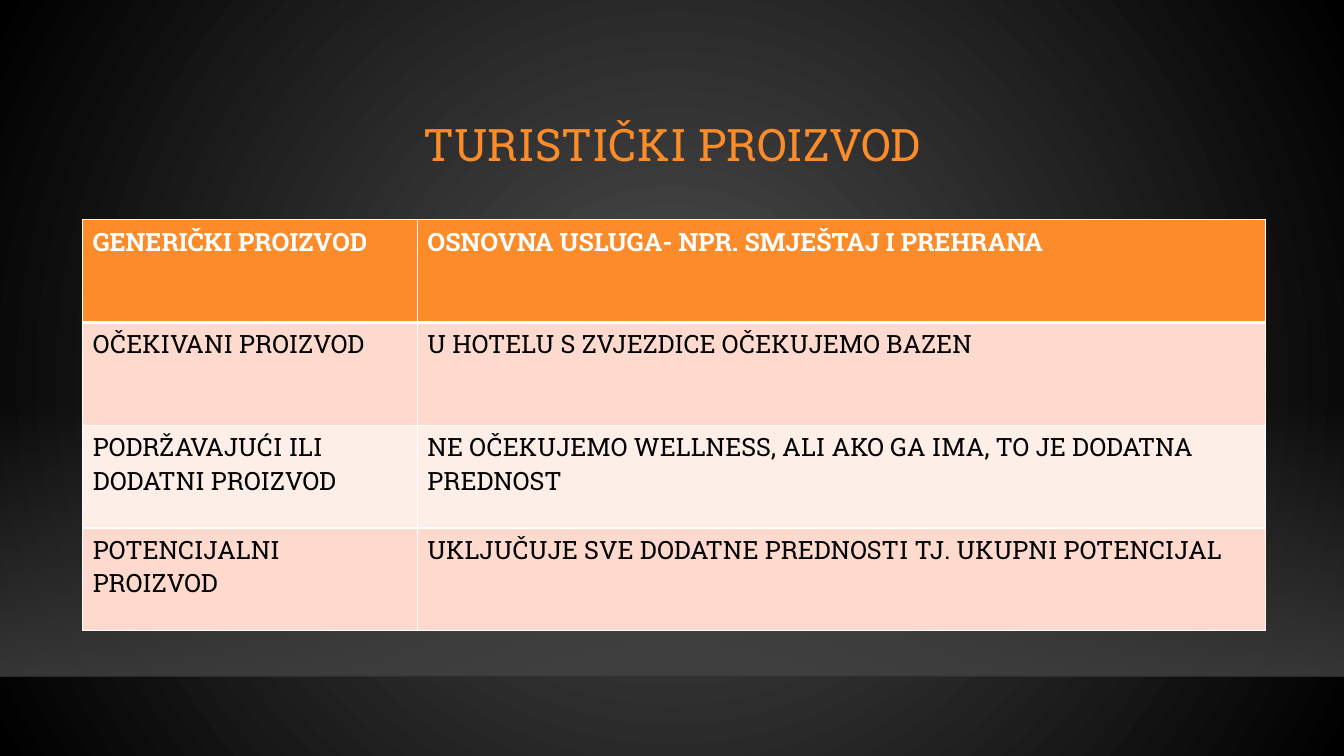
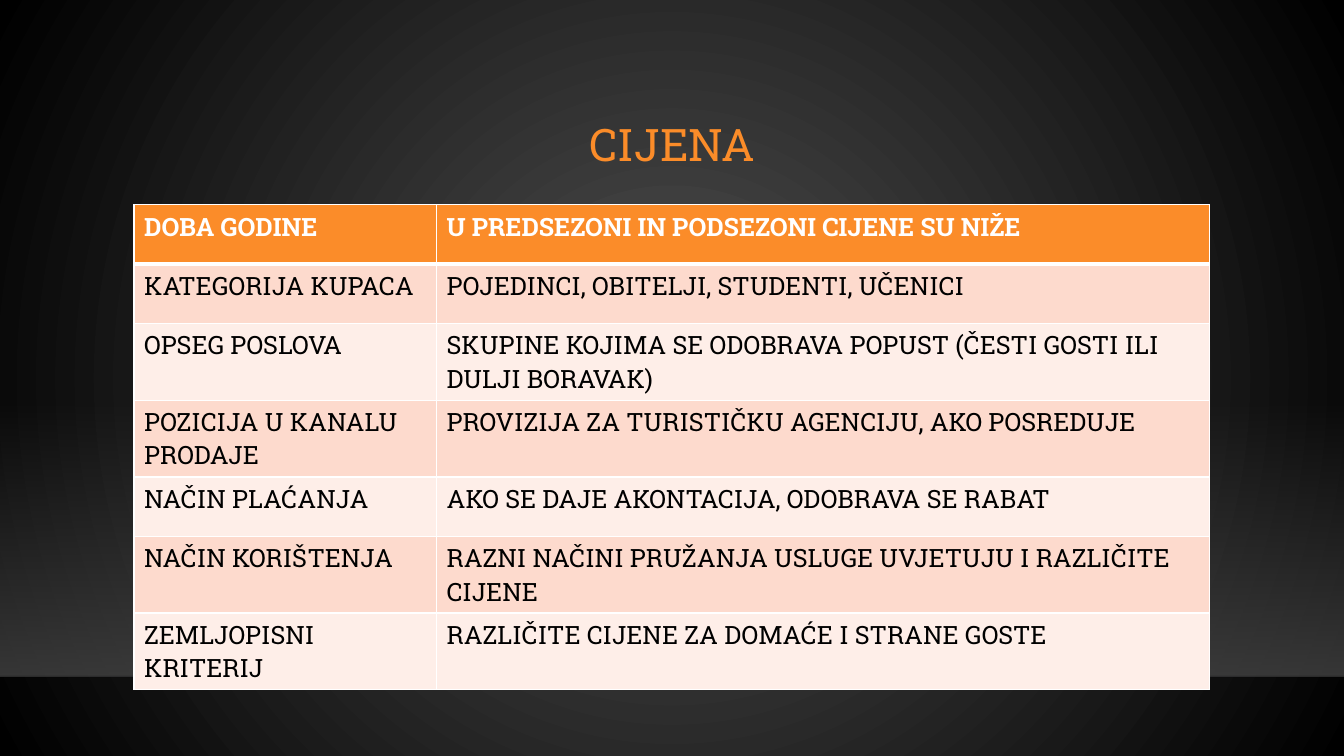
from dataclasses import dataclass

from lxml.etree import SubElement
from pptx import Presentation
from pptx.dml.color import RGBColor
from pptx.enum.shapes import MSO_CONNECTOR as Connector, MSO_SHAPE as Shape
from pptx.enum.text import MSO_ANCHOR as Anchor, MSO_AUTO_SIZE as AutoSize, PP_ALIGN as Align
from pptx.oxml import parse_xml
from pptx.oxml.ns import nsdecls, qn
from pptx.util import Inches, Pt


@dataclass(frozen=True)
class Theme:
    font: str = "Roboto Slab"
    accent: str = "FB8C29"
    white: str = "FFFFFF"
    black: str = "000000"
    glow: str = "505050"
    floor: str = "454545"
    horizon: str = "000001"
    odd_row: str = "FDDACD"
    even_row: str = "FEEEE8"
    title_size: int = 32
    table_size: int = 18
    thin: int = 1
    thick: int = 3


THEME = Theme()
WIDTH, HEIGHT = 13.33, 7.5
FLOOR_TOP, FLOOR_HEIGHT = 3.96, 2.75
TITLE_BOX = (1.59, 0.88, 10.16, 1.15)
TITLE_ONLY = 5

PRODUCT_ROWS = [
    ("GENERIČKI PROIZVOD", "OSNOVNA USLUGA- NPR. SMJEŠTAJ I PREHRANA"),
    ("OČEKIVANI PROIZVOD", "U HOTELU S ZVJEZDICE OČEKUJEMO BAZEN"),
    ("PODRŽAVAJUĆI ILI DODATNI PROIZVOD",
     "NE OČEKUJEMO WELLNESS, ALI AKO GA IMA, TO JE DODATNA PREDNOST"),
    ("POTENCIJALNI PROIZVOD", "UKLJUČUJE SVE DODATNE PREDNOSTI TJ. UKUPNI POTENCIJAL"),
]
PRICE_ROWS = [
    ("DOBA GODINE", "U PREDSEZONI IN PODSEZONI CIJENE SU NIŽE"),
    ("KATEGORIJA KUPACA", "POJEDINCI, OBITELJI, STUDENTI, UČENICI"),
    ("OPSEG POSLOVA", "SKUPINE KOJIMA SE ODOBRAVA POPUST (ČESTI GOSTI ILI DULJI BORAVAK)"),
    ("POZICIJA U KANALU PRODAJE", "PROVIZIJA ZA TURISTIČKU AGENCIJU, AKO POSREDUJE"),
    ("NAČIN PLAĆANJA", "AKO SE DAJE AKONTACIJA, ODOBRAVA SE RABAT"),
    ("NAČIN KORIŠTENJA", "RAZNI NAČINI PRUŽANJA USLUGE UVJETUJU I RAZLIČITE CIJENE"),
    ("ZEMLJOPISNI KRITERIJ", "RAZLIČITE CIJENE ZA DOMAĆE I STRANE GOSTE"),
]


def rgb(color):
    return RGBColor.from_string(color)


def inches(values):
    return [Inches(value) for value in values]


def set_gradient(owner, fill, stops, direction):
    fill.solid()
    stop_list = "".join(
        f'<a:gs pos="{position * 1000}"><a:srgbClr val="{color}">'
        f'<a:alpha val="{alpha * 1000}"/></a:srgbClr></a:gs>'
        for position, color, alpha in stops
    )
    gradient = parse_xml(
        f'<a:gradFill {nsdecls("a")} rotWithShape="1">'
        f"<a:gsLst>{stop_list}</a:gsLst>{direction}</a:gradFill>"
    )
    solid = next(owner.element.iter(qn("a:solidFill")))
    solid.getparent().replace(solid, gradient)


def set_background(master):
    set_gradient(
        master, master.background.fill,
        [(0, THEME.glow, 100), (100, THEME.black, 100)],
        '<a:path path="circle"><a:fillToRect l="50000" t="50000" r="50000" b="50000"/></a:path>',
    )


def add_floor(slide):
    floor = slide.shapes.add_shape(
        Shape.RECTANGLE, *inches((0, FLOOR_TOP, WIDTH, FLOOR_HEIGHT)))
    floor.shadow.inherit = False
    floor.line.fill.background()
    set_gradient(
        floor, floor.fill,
        [(0, THEME.floor, 0), (100, THEME.floor, 80)],
        '<a:lin ang="5400000" scaled="0"/>',
    )
    return floor


def add_horizon(slide):
    level = FLOOR_TOP + FLOOR_HEIGHT
    horizon = slide.shapes.add_connector(
        Connector.STRAIGHT, *inches((0, level, WIDTH, level)))
    horizon.line.width = Pt(THEME.thin)
    horizon.line.color.rgb = rgb(THEME.horizon)
    color = next(horizon.element.iter(qn("a:srgbClr")))
    SubElement(color, qn("a:alpha"), val="20000")
    SubElement(horizon.element.spPr, qn("a:effectLst"))
    return horizon


def move_to_master(master, scenery):
    tree = master.shapes.element
    for order, part in enumerate(scenery):
        next(part.element.iter(qn("p:cNvPr"))).set("id", str(100 + order))
        tree.insert(2 + order, part.element)


def format_text(paragraph, size, color, bold=False):
    for run in paragraph.runs:
        run.font.name = THEME.font
        run.font.size = Pt(size)
        run.font.color.rgb = rgb(color)
        run.font.bold = bold


def set_title(slide, text):
    title = slide.shapes.title
    title.left, title.top, title.width, title.height = inches(TITLE_BOX)
    frame = title.text_frame
    frame.text = text
    frame.auto_size = AutoSize.NONE
    frame.vertical_anchor = Anchor.MIDDLE
    heading = frame.paragraphs[0]
    heading.alignment = Align.CENTER
    heading.line_spacing = 0.9
    format_text(heading, THEME.title_size, THEME.accent)


def set_borders(cell, top, bottom):
    properties = cell._tc.get_or_add_tcPr()
    widths = {"lnL": THEME.thin, "lnR": THEME.thin, "lnT": top, "lnB": bottom}
    for side, width in widths.items():
        border = SubElement(properties, qn(f"a:{side}"), w=str(Pt(width)))
        fill = SubElement(border, qn("a:solidFill"))
        SubElement(fill, qn("a:srgbClr"), val=THEME.white)


def style_cell(cell, row):
    header = row == 0
    set_borders(
        cell,
        top=THEME.thick if row == 1 else THEME.thin,
        bottom=THEME.thick if header else THEME.thin,
    )
    body_fill = THEME.odd_row if row % 2 else THEME.even_row
    cell.fill.solid()
    cell.fill.fore_color.rgb = rgb(THEME.accent if header else body_fill)
    format_text(
        cell.text_frame.paragraphs[0], THEME.table_size,
        THEME.white if header else THEME.black, header,
    )


def add_term_table(slide, rows, left, top, column_widths, row_height):
    table = slide.shapes.add_table(
        len(rows), len(column_widths),
        *inches((left, top, sum(column_widths), row_height * len(rows))),
    ).table
    for column, width in zip(table.columns, column_widths):
        column.width = Inches(width)
    for row, texts in enumerate(rows):
        table.rows[row].height = Inches(row_height)
        for column, text in enumerate(texts):
            cell = table.cell(row, column)
            cell.text_frame.text = text
            style_cell(cell, row)


def add_table_slide(deck, title, rows, **layout):
    slide = deck.slides.add_slide(deck.slide_layouts[TITLE_ONLY])
    set_title(slide, title)
    add_term_table(slide, rows, **layout)
    return slide


def main():
    deck = Presentation()
    deck.slide_width, deck.slide_height = inches((WIDTH, HEIGHT))
    set_background(deck.slide_master)
    product = add_table_slide(
        deck, "TURISTIČKI PROIZVOD", PRODUCT_ROWS,
        left=0.82, top=2.18, column_widths=(3.32, 8.41), row_height=1.02)
    add_table_slide(
        deck, "CIJENA", PRICE_ROWS,
        left=1.33, top=2.03, column_widths=(3, 7.67), row_height=0.59)
    move_to_master(deck.slide_master, [add_floor(product), add_horizon(product)])
    deck.save("out.pptx")


if __name__ == "__main__":
    main()
